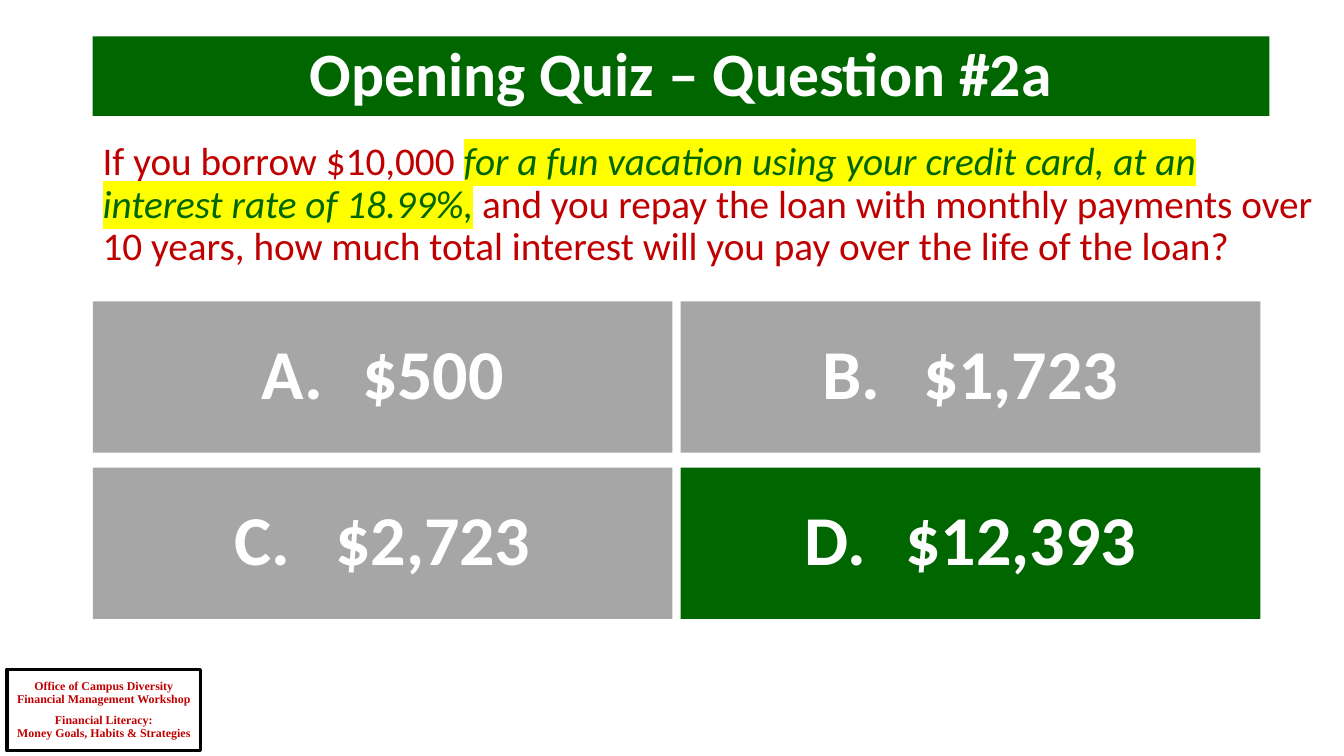
"""Build the quiz slide with a title band, a question and four answer tiles."""
from lxml.etree import Element, SubElement
from pptx import Presentation
from pptx.dml.color import RGBColor
from pptx.enum.shapes import MSO_SHAPE
from pptx.enum.text import MSO_ANCHOR, PP_ALIGN
from pptx.oxml.ns import qn
from pptx.util import Inches, Pt

GREEN, GREY, RED, WHITE = "006600", "A6A6A6", "C00000", "FFFFFF"
LEFT = 0.92
TILE_WIDTH, TILE_HEIGHT, COLUMN_STEP, ROW_STEP = 5.75, 1.5, 5.83, 1.65
TILES_TOP = 2.99


def color(hex_code):
    """Turn a hex string into a colour."""
    return RGBColor.from_string(hex_code)


def add_box(left, top, width, height, fill, lines, font_name, size, ink):
    """Add a rectangle with centred bold text and return it."""
    box = page.shapes.add_shape(
        MSO_SHAPE.RECTANGLE, Inches(left), Inches(top), Inches(width), Inches(height)
    )
    box.shadow.inherit = False
    box.line.fill.background()
    if fill:
        box.fill.solid()
        box.fill.fore_color.rgb = color(fill)
    else:
        box.fill.background()
    frame = box.text_frame
    frame.word_wrap = True
    frame.vertical_anchor = MSO_ANCHOR.MIDDLE
    frame.text = "\n".join(lines)
    for para in frame.paragraphs:
        para.alignment = PP_ALIGN.CENTER
        para.line_spacing = 0.9
        for span in para.runs:
            span.font.name = font_name
            span.font.size = Pt(size)
            span.font.bold = True
            span.font.color.rgb = color(ink)
    return box


deck = Presentation()
deck.slide_width, deck.slide_height = Inches(13.33), Inches(7.5)
page = deck.slides.add_slide(deck.slide_layouts[6])

footer_lines = [
    "Office of Campus Diversity\vFinancial Management Workshop",
    "Financial Literacy:\vMoney Goals, Habits & Strategies",
]
footer = add_box(0.07, 6.64, 1.92, 0.81, None, footer_lines, "Times New Roman", 8.5, RED)
footer.line.color.rgb = color("000000")
footer.line.width = Pt(2.25)
footer.text_frame.margin_left = footer.text_frame.margin_right = 0
footer.text_frame.paragraphs[1].space_before = Pt(6.5)

add_box(LEFT, 0.36, 11.67, 0.79, GREEN, ["Opening Quiz – Question #2a"], "Calibri", 44, WHITE)

question = page.shapes.add_textbox(Inches(LEFT), Inches(1.36), Inches(12.26), Inches(1.5))
question.text_frame.word_wrap = True
para = question.text_frame.paragraphs[0]
para.line_spacing = 0.9
question_parts = [
    ("If you borrow $10,000 ", False),
    ("for a fun vacation using your credit card, at an interest rate of 18.99%,", True),
    (" and you repay the loan with monthly payments over 10 years, "
     "how much total interest will you pay over the life of the loan?", False),
]
for text, marked in question_parts:
    span = para.add_run()
    span.text = text
    span.font.name = "Calibri"
    span.font.size = Pt(28)
    span.font.italic = marked
    span.font.color.rgb = color(GREEN if marked else RED)
    if marked:
        highlight = Element(qn("a:highlight"))
        SubElement(highlight, qn("a:srgbClr"), val="FFFF00")
        span.font._element.find(qn("a:solidFill")).addnext(highlight)

answers = ["A.\t$500", "B.\t$1,723", "C.\t$2,723", "D.\t$12,393"]
correct = 3
for index, answer in enumerate(answers):
    row, column = divmod(index, 2)
    add_box(
        LEFT + column * COLUMN_STEP, TILES_TOP + row * ROW_STEP, TILE_WIDTH, TILE_HEIGHT,
        GREEN if index == correct else GREY, [answer], "Calibri", 50, WHITE,
    )

deck.save("out.pptx")
